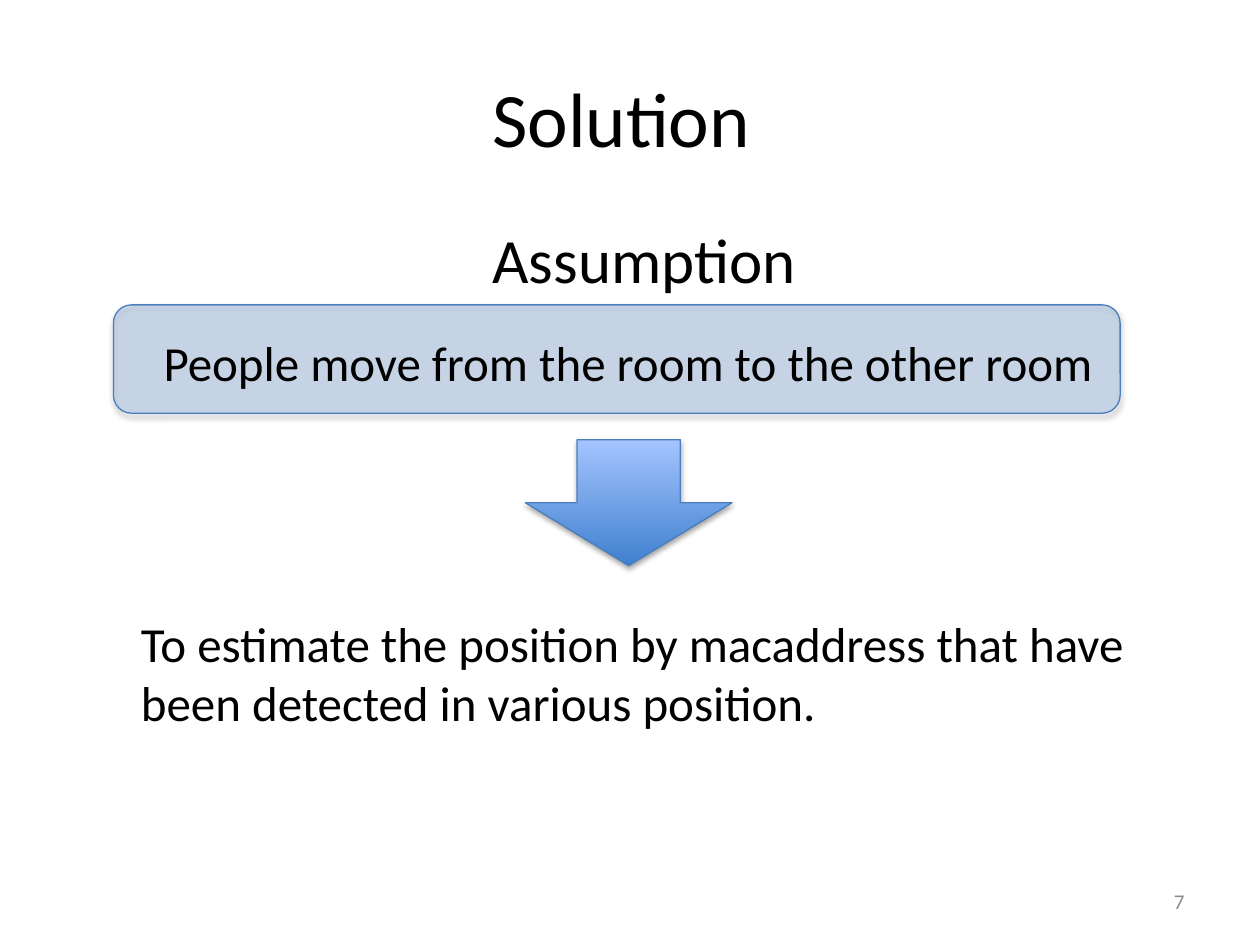
from lxml import etree
from pptx import Presentation
from pptx.dml.color import RGBColor
from pptx.enum import shapes, text
from pptx.oxml import ns
from pptx.util import Inches, Pt

FONT = "Calibri"
COLORS = {
    "text": "000000",
    "number": "8C8C8C",
    "panel": "558ED5",
    "outline": "4B7EBC",
    "arrow_bottom": "3F80CE",
    "arrow_top": "A4C4FF",
    "shadow": "000000",
}

TITLE = ("Solution ", (0.5, 0.3, 9, 1.25))
PANEL = (0.9, 2.42, 7.99, 0.86)
ARROW = (4.17, 3.49, 1.64, 1)
# wording, place, size, wraps
LABELS = [
    ("To estimate the position by macaddress that have been detected in various position.",
     (1.02, 4.82, 8.48, 1.04), 28, True),
    ("People move from the room to the other room", (1.2, 2.59, 7.7, 0.57), 28, False),
    ("Assumption", (3.81, 1.7, 2.64, 0.71), 36, False),
]
NUMBER = ("7", (7.17, 6.95, 2.33, 0.4))


def color(name):
    return RGBColor.from_string(COLORS[name])


def inches(place):
    return [Inches(length) for length in place]


def write(box, wording, size, color_name="text", align=text.PP_ALIGN.LEFT,
          anchor=text.MSO_ANCHOR.TOP, wrap=True):
    frame = box.text_frame
    frame.text = wording
    frame.word_wrap = wrap
    frame.vertical_anchor = anchor
    para = frame.paragraphs[0]
    para.alignment = align
    font = para.runs[0].font
    font.name, font.size = FONT, Pt(size)
    font.color.rgb = color(color_name)


def add_child(parent, tag, **attributes):
    return etree.SubElement(parent, ns.qn(tag), attributes)


def add_raised_shape(slide, kind, place):
    """Add an outlined shape with a soft shadow below it."""
    shape = slide.shapes.add_shape(kind, *inches(place))
    shape.line.color.rgb = color("outline")
    shape.line.width = Pt(0.75)
    shape.shadow.inherit = False
    effects = shape._element.spPr.find(ns.qn("a:effectLst"))
    shadow = add_child(effects, "a:outerShdw", blurRad=str(Pt(3.1)), dist=str(Pt(1.8)),
                       dir="5400000", rotWithShape="0")
    tint = add_child(shadow, "a:srgbClr", val=COLORS["shadow"])
    add_child(tint, "a:alpha", val="35000")
    return shape


def main():
    deck = Presentation()
    deck.slide_width, deck.slide_height = Inches(10), Inches(7.5)
    page = deck.slides.add_slide(deck.slide_layouts[5])

    panel = add_raised_shape(page, shapes.MSO_SHAPE.ROUNDED_RECTANGLE, PANEL)
    panel.fill.solid()
    panel.fill.fore_color.rgb = color("panel")
    tint = panel._element.spPr.find(ns.qn("a:solidFill"))[0]
    add_child(tint, "a:alpha", val="24000")

    wording, place = TITLE
    title = page.shapes.title
    title.left, title.top, title.width, title.height = inches(place)
    write(title, wording, 44, align=text.PP_ALIGN.CENTER, anchor=text.MSO_ANCHOR.MIDDLE)

    for wording, place, size, wrap in LABELS:
        write(page.shapes.add_textbox(*inches(place)), wording, size, wrap=wrap)

    arrow = add_raised_shape(page, shapes.MSO_SHAPE.DOWN_ARROW, ARROW)
    arrow.fill.gradient()
    arrow.fill.gradient_angle = 90
    for stop, name in zip(arrow.fill.gradient_stops, ("arrow_bottom", "arrow_top")):
        stop.color.rgb = color(name)

    wording, place = NUMBER
    write(page.shapes.add_textbox(*inches(place)), wording, 12, "number",
          text.PP_ALIGN.RIGHT, text.MSO_ANCHOR.MIDDLE)

    deck.save("out.pptx")


if __name__ == "__main__":
    main()
